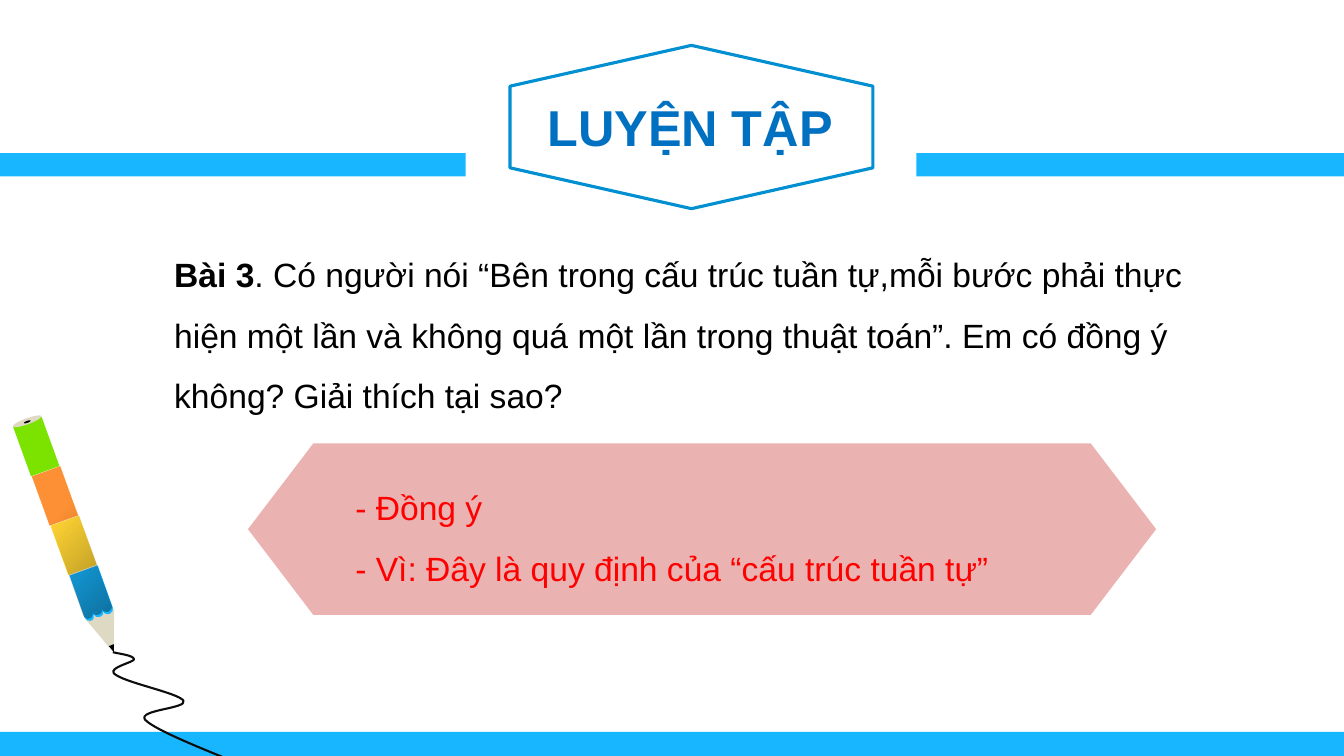
import pptx
import pptx.util
import pptx.dml.color
import pptx.enum.shapes
import pptx.enum.text
import pptx.oxml
import pptx.oxml.ns

Inches = pptx.util.Inches
Pt = pptx.util.Pt
RGB = pptx.dml.color.RGBColor
KIND = pptx.enum.shapes.MSO_SHAPE
ALIGN = pptx.enum.text.PP_ALIGN
ANCHOR = pptx.enum.text.MSO_ANCHOR
qn = pptx.oxml.ns.qn

SPACE = 'xmlns:a="http://schemas.openxmlformats.org/drawingml/2006/main"'
WHITE = RGB(0xFF, 0xFF, 0xFF)
BLACK = RGB(0, 0, 0)
SKY = RGB(0x17, 0xB6, 0xFF)
EDGE = RGB(0x00, 0x8F, 0xD0)
BLUE = RGB(0x00, 0x70, 0xC0)
WOOD = RGB(0xDD, 0xD9, 0xC3)
GOLD = RGB(0xFF, 0xD4, 0x34)
ORANGE = RGB(0xFD, 0x90, 0x34)
GREEN = RGB(0x7C, 0xE2, 0x00)
INK = RGB(0x0D, 0x0D, 0x0D)
ROSE = RGB(0xBF, 0, 0)
RED = RGB(0xFF, 0, 0)
WIDE = 40 / 3

deck = pptx.Presentation()
deck.slide_width, deck.slide_height = Inches(WIDE), Inches(7.5)
slide = deck.slides.add_slide(deck.slide_layouts[5])
shapes = slide.shapes


def add(group, kind, box, fill, turn=0):
    shape = group.add_shape(kind, *map(Inches, box))
    shape.rotation = turn
    shape.shadow.inherit = False
    shape.fill.solid()
    shape.fill.fore_color.rgb = fill
    shape.line.fill.background()
    return shape


def trace(group, path, fill=None):
    """Draw points (x, y) and cubic curves (x1, y1, x2, y2, x, y); no fill leaves it open."""
    dots = [(Inches(s[i]), Inches(s[i + 1])) for s in path for i in range(0, len(s), 2)]
    pen = group.build_freeform(*dots[0])
    pen.add_line_segments(dots[1:], close=fill is not None)
    shape = pen.convert_to_shape()
    lines = iter(list(shape.element.iter(qn("a:lnTo"))))
    for step in path[1:]:
        line = next(lines)
        if len(step) == 6:
            curve = pptx.oxml.parse_xml(f"<a:cubicBezTo {SPACE}/>")
            line.addprevious(curve)
            for part in (line, next(lines), next(lines)):
                curve.append(part[0])
                part.getparent().remove(part)
    shape.shadow.inherit = False
    shape.line.fill.background()
    if fill is None:
        shape.fill.background()
    else:
        shape.fill.solid()
        shape.fill.fore_color.rgb = fill
    return shape


# Bars and title badge
for top, tall in ((1.52, 0.23), (7.26, 0.24)):
    add(shapes, KIND.RECTANGLE, (0, top, WIDE, tall), SKY)
sign = shapes.add_group_shape().shapes
add(sign, KIND.HEXAGON, (5.85, -0.97, 2.01, 4.47), WHITE, 90)
badge = add(sign, KIND.HEXAGON, (6.05, -0.54, 1.62, 3.6), WHITE, 90)
badge.line.color.rgb = EDGE
badge.line.width = Pt(2.25)

# Pencil
pencil = shapes.add_group_shape().shapes
add(pencil, KIND.ISOSCELES_TRIANGLE, (0.91, 6.08, 0.3, 0.41), WOOD, 160.1)
wave = [
    (0.84, 6.13),
    (0.85, 6.15, 0.88, 6.17, 0.9, 6.16), (0.93, 6.15, 0.94, 6.12, 0.93, 6.1),
    (0.94, 6.12, 0.97, 6.13, 0.99, 6.12), (1.02, 6.11, 1.03, 6.09, 1.02, 6.06),
    (1.03, 6.09, 1.06, 6.1, 1.09, 6.09), (1.11, 6.08, 1.13, 6.05, 1.12, 6.03),
]
trace(pencil, [(0.97, 5.61), (0.69, 5.71)] + wave, SKY)

for i, color in enumerate((GOLD, ORANGE, GREEN)):
    box = (0.47 - 0.185 * i, 5.26 - 0.49 * i, 0.52, 0.3)
    add(pencil, KIND.RECTANGLE, box, color, 70.1)

trace(pencil, [(1.13, 6.39), (1.08, 6.41), (1.13, 6.47)], BLACK)

raised = [tuple(v - (0.02, 0.03)[k % 2] for k, v in enumerate(step)) for step in wave]
shade = trace(pencil, [(0.42, 4.11), (0.14, 4.21)] + raised, BLACK)
stops = "".join(
    f'<a:gs pos="{spot}"><a:srgbClr val="000000"><a:alpha val="{alpha}"/></a:srgbClr></a:gs>'
    for spot, alpha in ((48000, 0), (100000, 39000)))
blend = pptx.oxml.parse_xml(
    f'<a:gradFill {SPACE}><a:gsLst>{stops}</a:gsLst><a:lin ang="2700000" scaled="0"/></a:gradFill>')
props = shade.element.spPr
props.replace(props.find(qn("a:solidFill")), blend)

add(pencil, KIND.OVAL, (0.24, 4.03, 0.06, 0.3), WOOD, 70.1)
add(pencil, KIND.OVAL, (0.26, 4.15, 0.02, 0.07), BLACK, 70.1)
scrawl = trace(pencil, [
    (1.12, 6.47),
    (1.2, 6.49, 1.32, 6.5, 1.33, 6.54), (1.33, 6.57, 1.08, 6.62, 1.13, 6.68),
    (1.22, 6.77, 1.76, 6.87, 1.82, 6.95), (1.87, 7.03, 1.36, 7.04, 1.44, 7.14),
    (1.53, 7.24, 2.04, 7.44, 2.33, 7.56),
])
scrawl.line.color.rgb = INK
scrawl.line.width = Pt(1.5)

# Title, brought in front of its badge
title = shapes.title
title.left, title.top, title.width, title.height = map(Inches, (5.33, 0.9, 3.06, 0.71))
title.element.getparent().append(title.element)
frame = title.text_frame
frame.text = "LUYỆN TẬP"
frame.word_wrap = False
frame.auto_size = pptx.enum.text.MSO_AUTO_SIZE.NONE
frame.vertical_anchor = ANCHOR.TOP
head = frame.paragraphs[0]
head.alignment = ALIGN.LEFT
head.font.name = "Arial"
head.font.size = Pt(36)
head.font.bold = True
head.font.color.rgb = BLUE

# Question and answer
task = shapes.add_textbox(*map(Inches, (1.63, 2.27, 10.67, 1.92))).text_frame
task.word_wrap = True
label = task.paragraphs[0].add_run()
label.text = "Bài 3"
label.font.bold = True
task.paragraphs[0].add_run().text = (
    ". Có người nói “Bên trong cấu trúc tuần tự,mỗi bước phải thực hiện một lần "
    "và không quá một lần trong thuật toán”. Em có đồng ý không? Giải thích tại sao?")

panel = add(shapes, KIND.HEXAGON, (2.46, 4.4, 9.01, 1.7), ROSE)
panel.adjustments[0] = 0.381
tint = panel.element.spPr.find(qn("a:solidFill"))[0]
tint.append(pptx.oxml.parse_xml(f'<a:alpha {SPACE} val="30000"/>'))
reply = panel.text_frame
reply.text = "- Đồng ý\n- Vì: Đây là quy định của “cấu trúc tuần tự”"
reply.vertical_anchor = ANCHOR.MIDDLE
reply.margin_bottom = Inches(0.08)

for frame, color in ((task, BLACK), (reply, RED)):
    for para in frame.paragraphs:
        para.alignment = ALIGN.LEFT
        para.line_spacing = 1.5
        para.font.name = "Arial"
        para.font.size = Pt(24)
        para.font.color.rgb = color

deck.save("out.pptx")
